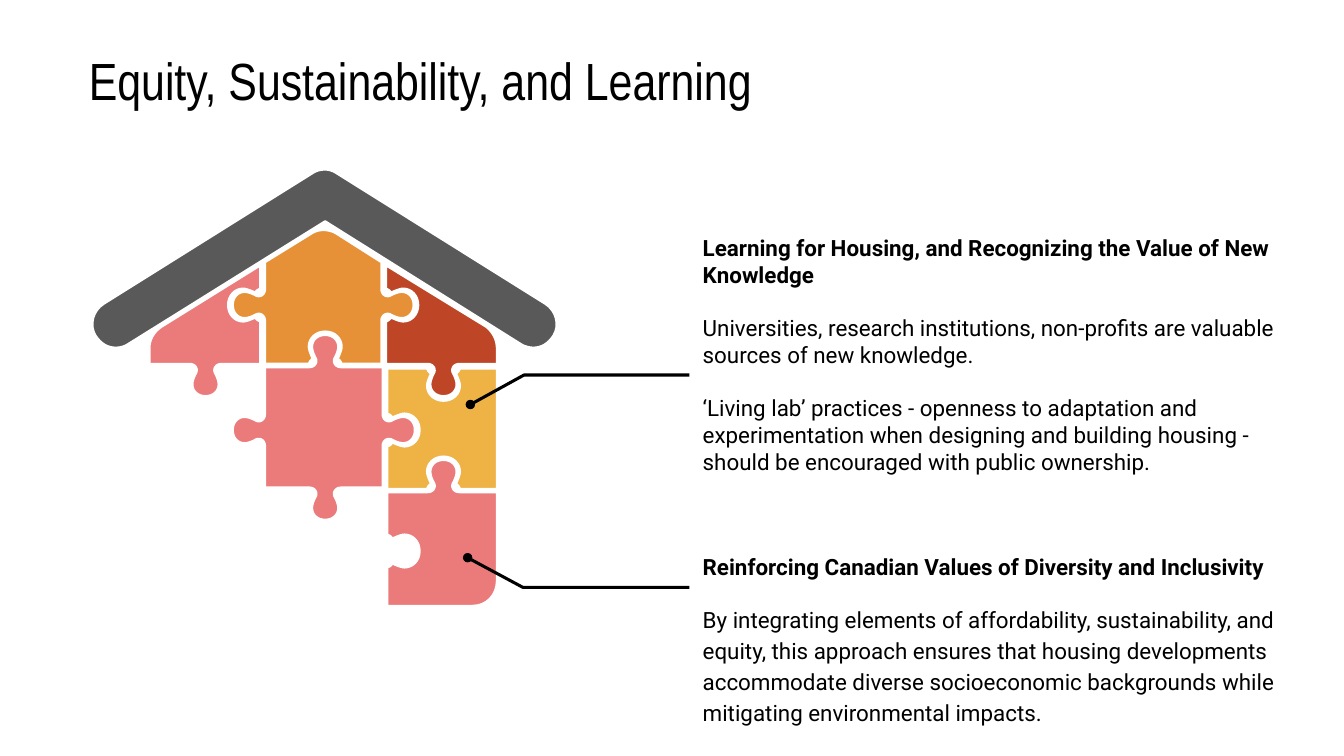
"""Build a slide with a puzzle house and two called-out texts."""
from pptx import Presentation
from pptx.dml.color import RGBColor
from pptx.enum.shapes import MSO_SHAPE
from pptx.enum.text import MSO_ANCHOR, PP_ALIGN
from pptx.util import Emu, Pt

SCALE = 9144
WIDTH = 1000
STEPS = 8
TITLE = "Equity, Sustainability, and Learning"
PINK = "EB7B7B"
WAYS = {"right": (1, 0), "left": (-1, 0), "down": (0, 1), "up": (0, -1)}

KNOBS = {
    "tab": [(-12, 0), (-8, 0), (-6, 3), (-7, 6), (-7, 6), (-10, 11),
            (-10, 15), (-10, 20), (-6, 24), (0, 24)],
    "socket": [(-12, 0), (-11, 3), (-10, 3), (-9, 4), (-9, 4), (-12, 10),
               (-12, 13), (-12, 19), (-7, 24), (0, 24)],
}

RED = ("BE4626", [
    (287, 197), ("socket", 287, 227, "down", "right"), (287, 271),
    ("tab", 330, 271, "right", "down"), (370, 271), (370, 259),
    (370, 253, 367, 247, 362, 243)])
CORE = (PINK, [
    (197, 273), ("tab", 242, 273, "right", "up"), (285, 273),
    ("tab", 285, 320, "down", "right"), (285, 363),
    ("tab", 242, 363, "left", "down"), (197, 363),
    ("tab", 197, 320, "up", "left")])
GOLD = ("EEB245", [
    (288, 274), ("socket", 330, 274, "right", "down"), (370, 274),
    (370, 364), ("socket", 330, 364, "left", "up"), (288, 364),
    ("socket", 288, 320, "up", "right")])
EAVE = (PINK, [
    (194, 197), ("socket", 194, 227, "down", "left"), (194, 271),
    ("tab", 153, 271, "left", "down"), (111, 271), (111, 259),
    (111, 253, 114, 247, 120, 243)])
ROOF = ("595959", [
    (242, 126), (238, 126, 235, 127, 232, 129), (77, 226),
    (69, 231, 66, 242, 71, 250), (75, 256, 80, 259, 86, 259),
    (90, 259, 93, 258, 96, 256), (242, 165), (387, 256),
    (390, 258, 394, 259, 397, 259), (403, 259, 408, 256, 412, 250),
    (417, 242, 414, 231, 406, 226), (251, 129),
    (248, 127, 245, 126, 242, 126)])
BASE = (PINK, [
    (288, 366), ("tab", 330, 366, "right", "up"), (370, 366), (370, 432),
    (370, 443, 362, 451, 352, 451), (288, 451),
    ("socket", 288, 410, "up", "right")])
PEAK = ("E69138", [
    (231, 174), (234, 172, 237, 171, 241, 171),
    (244, 171, 248, 172, 251, 174), (284, 195),
    ("tab", 284, 227, "down", "right"), (284, 271),
    ("socket", 242, 271, "left", "up"), (197, 271),
    ("tab", 197, 227, "up", "left"), (197, 195)])

LAYERS = [
    ([RED, CORE, GOLD], [(350, 301), (390, 279), (513, 279)]),
    ([EAVE, ROOF, BASE, PEAK], [(348, 415), (389, 437), (513, 437)]),
]

NOTES = [
    ((513, 166, 452, 196), 1.0, 14, [
        "Learning for Housing, and Recognizing the Value of New Knowledge",
        "Universities, research institutions, non-profits are valuable "
        "sources of new knowledge.",
        "‘Living lab’ practices - openness to adaptation and experimentation "
        "when designing and building housing - should be encouraged with "
        "public ownership."]),
    ((513, 400, 452, 149), 1.15, 12, [
        "Reinforcing Canadian Values of Diversity and Inclusivity",
        "By integrating elements of affordability, sustainability, and "
        "equity, this approach ensures that housing developments accommodate "
        "diverse socioeconomic backgrounds while mitigating environmental "
        "impacts."]),
]


def px(n):
    return Emu(round(n * SCALE))


def paint(color, hue):
    color.rgb = RGBColor.from_string(hue)


def curve(a, b, c, d):
    for i in range(1, STEPS + 1):
        t = i / STEPS
        s = 1 - t
        yield tuple(s**3 * p + 3 * s * s * t * q + 3 * s * t * t * r + t**3 * w
                    for p, q, r, w in zip(a, b, c, d))


def knob(kind, x, y, along, out):
    half = KNOBS[kind]
    full = half + [(-u, v) for u, v in half[-2::-1]]
    (ax, ay), (ox, oy) = WAYS[along], WAYS[out]
    pts = [(x + u * ax + v * ox, y + u * ay + v * oy) for u, v in full]
    yield pts[0]
    for i in range(0, len(pts) - 1, 3):
        yield from curve(*pts[i:i + 4])


def trace(parts):
    pts = []
    for part in parts:
        if part[0] in KNOBS:
            pts.extend(knob(*part))
        elif len(part) == 6:
            pts.extend(curve(pts[-1], part[:2], part[2:4], part[4:]))
        else:
            pts.append(part)
    return pts


def outline(shapes, pts, hue, width, close):
    pts = [(px(x), px(y)) for x, y in pts]
    pen = shapes.build_freeform(*pts[0], scale=1.0)
    pen.add_line_segments(pts[1:], close=close)
    shape = pen.convert_to_shape()
    shape.shadow.inherit = False
    shape.line.width = Pt(width)
    paint(shape.line.color, hue)
    return shape


def piece(shapes, hue, parts):
    shape = outline(shapes, trace(parts), "FFFFFF", 1.5, True)
    shape.fill.solid()
    paint(shape.fill.fore_color, hue)


def leader(shapes, pts):
    group = shapes.add_group_shape().shapes
    outline(group, pts, "000000", 1.64, False).fill.background()
    x, y = pts[0]
    dot = group.add_shape(MSO_SHAPE.OVAL, px(x - 3.5), px(y - 3.5), px(7), px(7))
    dot.shadow.inherit = False
    dot.fill.solid()
    paint(dot.fill.fore_color, "000000")
    dot.line.fill.background()


def write(para, text, face, size, bold):
    run = para.add_run()
    run.text = text
    run.font.name = face
    run.font.size = Pt(size)
    run.font.bold = bold
    paint(run.font.color, "000000")


def frame(shape):
    text = shape.text_frame
    text.word_wrap = True
    text.vertical_anchor = MSO_ANCHOR.MIDDLE
    text.margin_left = text.margin_right = px(10)
    text.margin_top = text.margin_bottom = px(10)
    return text


def note(shapes, box, pitch, gap, lines):
    text = frame(shapes.add_textbox(*map(px, box)))
    for i, line in enumerate(lines):
        para = text.add_paragraph() if i else text.paragraphs[0]
        para.line_spacing = pitch
        para.space_before = Pt(gap if i else 0)
        write(para, line, "Roboto", 12, i == 0)


def main():
    deck = Presentation()
    deck.slide_width, deck.slide_height = px(WIDTH), px(WIDTH * 9 / 16)
    slide = deck.slides.add_slide(deck.slide_layouts[5])
    shapes = slide.shapes
    title = shapes.title
    title.left, title.top, title.width, title.height = map(px, (17, 33, 591, 53))
    para = frame(title).paragraphs[0]
    para.alignment = PP_ALIGN.CENTER
    write(para, TITLE, "Arial Narrow", 28, False)
    for pieces, pts in LAYERS:
        for hue, parts in pieces:
            piece(shapes, hue, parts)
        leader(shapes, pts)
    for item in NOTES:
        note(shapes, *item)
    deck.save("out.pptx")


if __name__ == "__main__":
    main()
